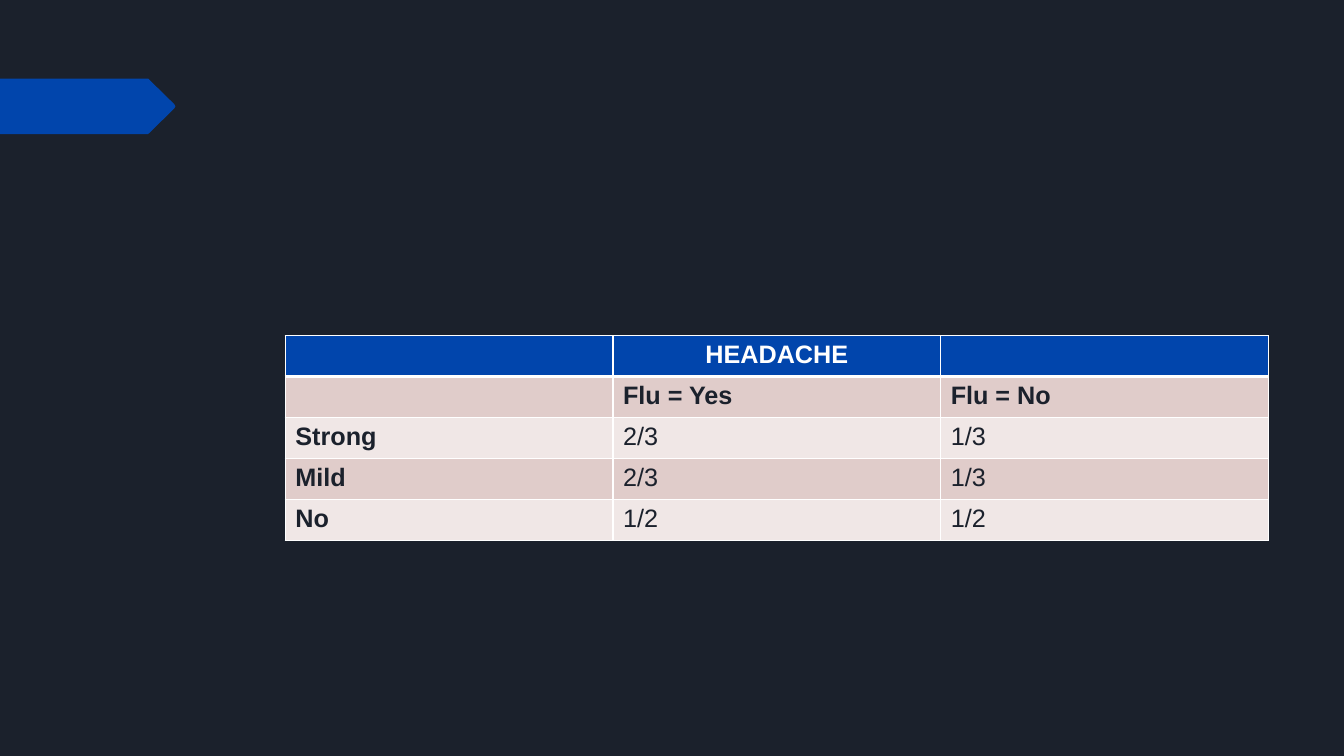
from dataclasses import dataclass

from lxml.etree import SubElement
from pptx import Presentation
from pptx.dml.color import RGBColor
from pptx.enum.text import PP_ALIGN
from pptx.oxml.ns import qn
from pptx.util import Inches, Pt


@dataclass(frozen=True)
class Theme:
    """Colours, font and sizes of the slide."""
    background: str = "1B212C"
    accent: str = "0145AC"
    light: str = "FFFFFF"
    bands: tuple = ("E0CCCA", "F0E7E6")
    font: str = "Arial"
    size: int = 18
    rule: int = 1
    header_rule: int = 3


THEME = Theme()
ROWS = [
    ("", "HEADACHE", ""),
    ("", "Flu = Yes", "Flu = No"),
    ("Strong", "2/3", "1/3"),
    ("Mild", "2/3", "1/3"),
    ("No", "1/2", "1/2"),
]


def rgb(code):
    """Turn a hex code into a colour."""
    return RGBColor.from_string(code)


def add_marker(slide, left, top, width, height):
    """Draw the page marker, a bar with a slightly blunted point."""
    shoulder, blunt = width - 0.27, 0.02
    middle = height / 2
    outline = [
        (shoulder, 0),
        (width - blunt / 2, middle - blunt),
        (width, middle),
        (width - blunt / 2, middle + blunt),
        (shoulder, height),
        (0, height),
    ]
    points = [(Inches(left + x), Inches(top + y)) for x, y in outline]
    builder = slide.shapes.build_freeform(Inches(left), Inches(top))
    builder.add_line_segments(points, close=True)
    sp = builder.convert_to_shape()
    sp.shadow.inherit = False
    sp.fill.solid()
    sp.fill.fore_color.rgb = rgb(THEME.accent)
    sp.line.fill.background()


def set_borders(cell, top, bottom):
    """Rule a cell on all sides, with the given top and bottom widths."""
    tc_pr = cell._tc.get_or_add_tcPr()
    widths = {"lnL": THEME.rule, "lnR": THEME.rule, "lnT": top, "lnB": bottom}
    for side, width in widths.items():
        ln = SubElement(tc_pr, qn(f"a:{side}"), w=str(Pt(width)))
        fill = SubElement(ln, qn("a:solidFill"))
        SubElement(fill, qn("a:srgbClr"), val=THEME.light)


def fill_cell(cell, text, row, col):
    """Style one cell by its place in the table and write its text."""
    header = row == 0
    set_borders(
        cell,
        THEME.header_rule if row == 1 else THEME.rule,
        THEME.header_rule if header else THEME.rule,
    )
    cell.fill.solid()
    cell.fill.fore_color.rgb = rgb(THEME.accent if header else THEME.bands[(row - 1) % 2])
    p = cell.text_frame.paragraphs[0]
    p.font.size = Pt(THEME.size)
    if not text:
        return
    if header:
        p.alignment = PP_ALIGN.CENTER
    r = p.add_run()
    r.text = text
    r.font.name = THEME.font
    r.font.size = Pt(THEME.size)
    r.font.bold = row < 2 or col == 0
    r.font.color.rgb = rgb(THEME.light if header else THEME.background)


def add_probability_table(slide, left, top, width, height):
    """Place the headache table with equal rows and columns."""
    n_rows, n_cols = len(ROWS), len(ROWS[0])
    frame = slide.shapes.add_table(
        n_rows, n_cols, Inches(left), Inches(top), Inches(width), Inches(height)
    )
    table = frame.table
    for row, texts in enumerate(ROWS):
        for col, text in enumerate(texts):
            fill_cell(table.cell(row, col), text, row, col)


def main():
    """Build and save the slide."""
    prs = Presentation()
    prs.slide_width, prs.slide_height = Inches(13.33), Inches(7.5)
    s = prs.slides.add_slide(prs.slide_layouts[6])
    s.background.fill.solid()
    s.background.fill.fore_color.rgb = rgb(THEME.background)
    add_marker(s, 0, 0.78, 1.74, 0.55)
    add_probability_table(s, 2.83, 3.33, 9.75, 2.03)
    prs.save("out.pptx")


if __name__ == "__main__":
    main()
